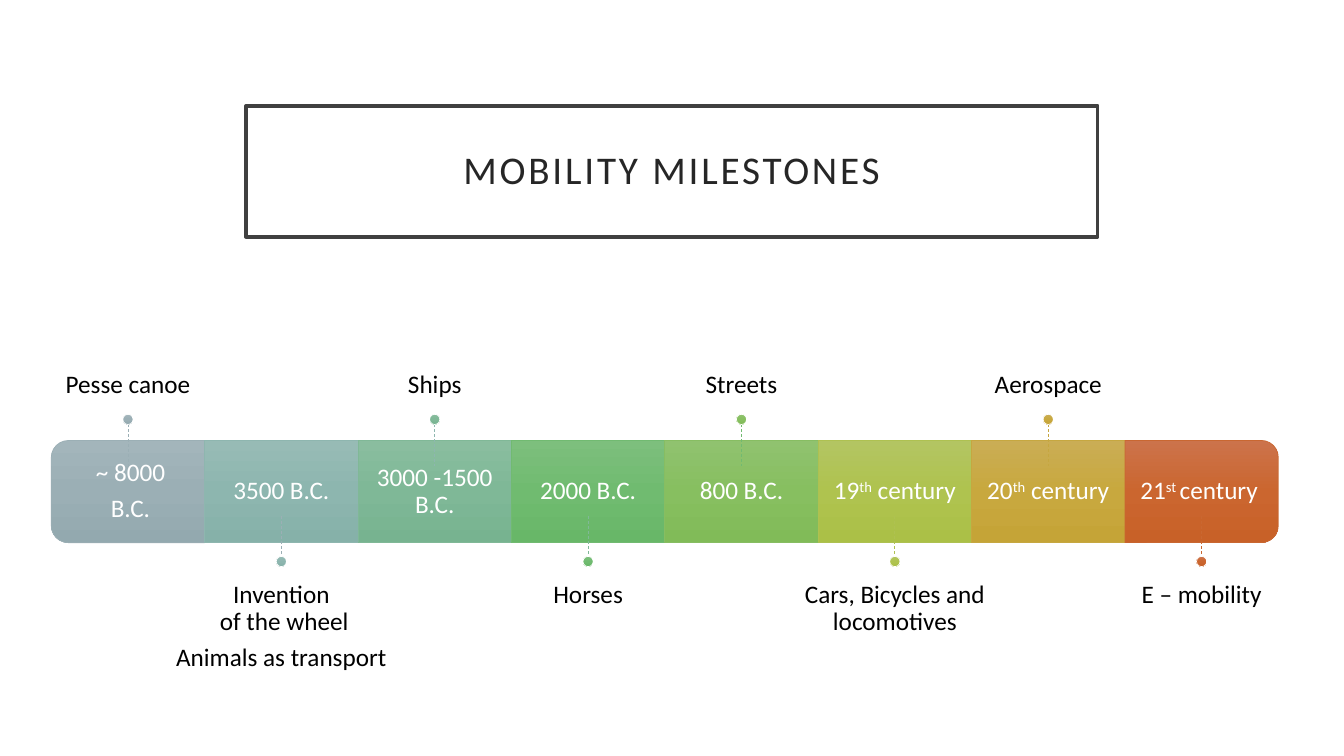
from lxml.etree import SubElement
from pptx import Presentation
from pptx.dml.color import RGBColor
from pptx.enum.dml import MSO_LINE
from pptx.enum.shapes import MSO_CONNECTOR, MSO_SHAPE
from pptx.enum.text import MSO_ANCHOR, MSO_AUTO_SIZE, PP_ALIGN
from pptx.oxml import parse_xml
from pptx.oxml.ns import nsdecls, qn
from pptx.util import Pt

COLORS = {
    "white": "FFFFFF", "black": "000000", "title": "262626", "frame": "404040",
    "slate": "9BAFB5", "teal": "8EB6AF", "sea": "80B897", "green": "71BA71",
    "leaf": "87BD62", "lime": "AEC151", "gold": "C6A740", "rust": "C96731",
}
GRADIENTS = {
    "slate": ("A3B5BB", "9BAFB5", "93A9AF"),
    "teal": ("97BBB5", "8DB6AF", "86B1A9"),
    "sea": ("8ABD9F", "7FB897", "77B390"),
    "green": ("7DBF7D", "70BB70", "68B768"),
    "leaf": ("90C26F", "87BF60", "81BB58"),
    "lime": ("B3C562", "AFC34F", "ABC047"),
    "gold": ("CAAD55", "C8A83E", "C5A437"),
    "rust": ("CC734B", "CB662F", "C86128"),
}
# Text between bars is superscript.
MILESTONES = [
    ("slate", "slate", ["~ 8000", "B.C."], ["Pesse canoe"]),
    ("teal", "slate", ["3500 B.C."], ["Invention\n of the wheel", "Animals as transport"]),
    ("sea", "teal", ["3000 -1500 B.C."], ["Ships"]),
    ("green", "sea", ["2000 B.C."], ["Horses"]),
    ("leaf", "green", ["800 B.C."], ["Streets"]),
    ("lime", "lime", ["19|th| century"], ["Cars, Bicycles and locomotives"]),
    ("gold", "gold", ["20|th| century"], ["Aerospace"]),
    ("rust", "rust", ["21|st |century"], ["E – mobility"]),
]
FONT = "Calibri"
FIRST_CENTER, PITCH = 91.4, 109.56
BAND_TOP, BAND_HEIGHT = 314.6, 73
LABEL_WIDTH, LABEL_HEIGHT = 182, 126.7
DOT = 7.3
INSET = 10.8
END_SHIFT = 1.8


def color(name):
    return RGBColor.from_string(COLORS[name])


def set_frame(frame, anchor, insets):
    frame.word_wrap = True
    frame.auto_size = MSO_AUTO_SIZE.NONE
    frame.vertical_anchor = anchor
    frame.margin_left, frame.margin_top, frame.margin_right, frame.margin_bottom = map(Pt, insets)


def add_span(para, text, size, name):
    span = para.add_run()
    span.text = text
    span.font.name = FONT
    span.font.size = Pt(size)
    span.font.color.rgb = color(name)
    return span


def add_text(page, center, top, width, height, lines, name, anchor, insets):
    box = page.shapes.add_textbox(Pt(center - width / 2), Pt(top), Pt(width), Pt(height))
    frame = box.text_frame
    set_frame(frame, anchor, insets)
    for index, line in enumerate(lines):
        para = frame.paragraphs[0] if index == 0 else frame.add_paragraph()
        para.alignment = PP_ALIGN.CENTER
        para.line_spacing = 0.9
        para.space_after = Pt(6.3)
        for row, row_text in enumerate(line.split("\n")):
            if row:
                para.add_line_break()
            for part, text in enumerate(row_text.split("|")):
                if text:
                    span = add_span(para, text, 18, name)
                    if part % 2:
                        span.font._element.set("baseline", "30000")


def add_gradient_shape(page, kind, center, middle, width, height, name, line_name):
    shape = page.shapes.add_shape(
        kind, Pt(center - width / 2), Pt(middle - height / 2), Pt(width), Pt(height))
    shape.shadow.inherit = False
    shape.line.color.rgb = color(line_name)
    shape.line.width = Pt(0.5)
    stops = "".join(
        f'<a:gs pos="{index * 50000}"><a:srgbClr val="{value}"/></a:gs>'
        for index, value in enumerate(GRADIENTS[name]))
    gradient = parse_xml(
        f'<a:gradFill {nsdecls("a")} rotWithShape="0"><a:gsLst>{stops}</a:gsLst>'
        '<a:lin ang="5400000" scaled="0"/></a:gradFill>')
    shape._element.spPr.find(qn("a:prstGeom")).addnext(gradient)
    return shape


def add_block(page, index, center, name):
    middle = BAND_TOP + BAND_HEIGHT / 2
    rotation = {0: 270, len(MILESTONES) - 1: 90}.get(index)
    if rotation is None:
        add_gradient_shape(page, MSO_SHAPE.RECTANGLE, center, middle,
                           PITCH, BAND_HEIGHT, name, name)
    else:
        end = add_gradient_shape(page, MSO_SHAPE.ROUND_2_SAME_RECTANGLE, center, middle,
                                 BAND_HEIGHT, PITCH, name, name)
        end.rotation = rotation


def add_date(page, index, center, lines):
    shift = {0: END_SHIFT, len(MILESTONES) - 1: -END_SHIFT}.get(index, 0)
    add_text(page, center + shift, BAND_TOP, PITCH - 2 * abs(shift), BAND_HEIGHT,
             lines, "white", MSO_ANCHOR.MIDDLE, [INSET] * 4)


def add_stem(page, center, top, bottom, name):
    stem = page.shapes.add_connector(
        MSO_CONNECTOR.STRAIGHT, Pt(center), Pt(top), Pt(center), Pt(bottom))
    stem.line.color.rgb = color(name)
    stem.line.width = Pt(0.5)
    stem.line.dash_style = MSO_LINE.DASH
    SubElement(stem._element.spPr, qn("a:effectLst"))


def add_milestone(page, index, name, stem_name, date, label):
    center = FIRST_CENTER + index * PITCH
    add_block(page, index, center, name)
    add_date(page, index, center, date)
    if index % 2 == 0:
        label_top, anchor, insets = 169.2, MSO_ANCHOR.BOTTOM, (0, 0, 0, INSET)
        stem_top, stem_bottom, dot_middle = 303.2, 332.6, 299.6
    else:
        label_top, anchor, insets = 404.8, MSO_ANCHOR.TOP, (0, INSET, 0, 0)
        stem_top, stem_bottom, dot_middle = 368.6, 397.5, 401.1
    add_text(page, center, label_top, LABEL_WIDTH, LABEL_HEIGHT, label, "black", anchor, insets)
    add_stem(page, center, stem_top, stem_bottom, stem_name)
    add_gradient_shape(page, MSO_SHAPE.OVAL, center, dot_middle, DOT, DOT, name, "white")


def add_title(page, text):
    title = page.shapes.title
    title.left, title.top, title.width, title.height = Pt(175.7), Pt(75.6), Pt(608.4), Pt(93.6)
    title.fill.solid()
    title.fill.fore_color.rgb = color("white")
    title.line.color.rgb = color("frame")
    title.line.width = Pt(2.5)
    set_frame(title.text_frame, MSO_ANCHOR.MIDDLE, [14.4] * 4)
    para = title.text_frame.paragraphs[0]
    para.alignment = PP_ALIGN.CENTER
    para.line_spacing = 0.9
    span = add_span(para, text, 28, "title")
    span.font._element.set("spc", "200")


def main():
    deck = Presentation()
    deck.slide_width, deck.slide_height = Pt(960), Pt(540)
    page = deck.slides.add_slide(deck.slide_layouts[5])
    add_title(page, "MOBILITY MILESTONES")
    for index, milestone in enumerate(MILESTONES):
        add_milestone(page, index, *milestone)
    deck.save("out.pptx")


if __name__ == "__main__":
    main()
